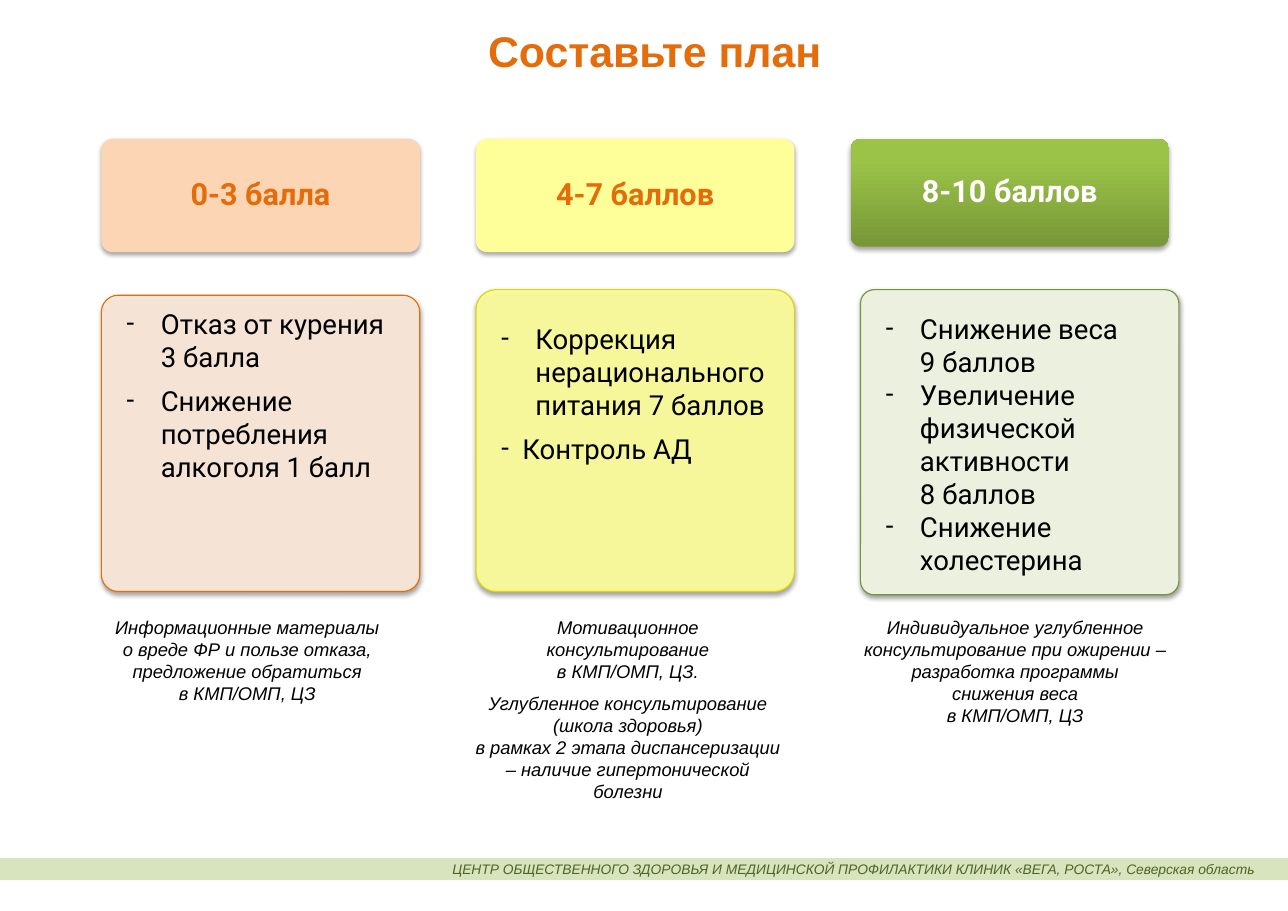
from copy import deepcopy
from lxml.etree import SubElement as Sub
from pptx import Presentation
from pptx.dml.color import RGBColor as Rgb
from pptx.enum.shapes import MSO_SHAPE as Kind
from pptx.enum.text import MSO_ANCHOR as Anchor, MSO_AUTO_SIZE as Fit, PP_ALIGN as Align
from pptx.oxml.ns import qn
from pptx.util import Inches, Pt

# Content: one dict per column; list items are (text, indent)
TITLE = "Составьте план"
FOOTER = ("ЦЕНТР ОБЩЕСТВЕННОГО ЗДОРОВЬЯ И МЕДИЦИНСКОЙ ПРОФИЛАКТИКИ "
          "КЛИНИК «ВЕГА, РОСТА», Северская область")
COLUMNS = [
    {"head": "0-3 балла", "key": "peach", "ink": "orange", "tall": 1.03,
     "card": (0.92, 2.68, 2.69, 0.057), "alpha": 91,
     "list": (2.76, 1.65), "gap": 7,
     "items": [("Отказ от курения\v3 балла", 0.31),
               ("Снижение потребления алкоголя 1 балл", 0.31)],
     "note": (0.83, 2.83, 0.91),
     "notes": ["Информационные материалы\vо вреде ФР и пользе отказа, "
               "предложение обратиться\vв КМП/ОМП, ЦЗ"]},
    {"head": "4-7 баллов", "key": "lemon", "ink": "orange", "tall": 1.03,
     "card": (4.32, 2.63, 2.74, 0.066), "alpha": 91,
     "list": (2.6, 1.94), "gap": 7,
     "items": [("Коррекция нерационального питания 7 баллов", 0.31),
               ("Контроль АД", 0.19)],
     "note": (4.2, 3, 1.81),
     "notes": ["Мотивационное консультирование\vв КМП/ОМП, ЦЗ.",
               "Углубленное консультирование (школа здоровья)\vв рамках 2 этапа "
               "диспансеризации – наличие гипертонической болезни"]},
    {"head": "8-10 баллов", "key": "green", "ink": "white", "tall": 0.98,
     "card": (7.81, 2.63, 2.77, 0.045), "alpha": 100,
     "list": (2.81, 2.44), "gap": 0,
     "items": [("Снижение веса\v9 баллов", 0.31),
               ("Увеличение физической активности\v8 баллов", 0.31),
               ("Снижение холестерина", 0.31)],
     "note": (7.56, 3.31, 1.11),
     "notes": ["Индивидуальное углубленное консультирование при ожирении –\v"
               "разработка программы\vснижения веса\vв КМП/ОМП, ЦЗ"]},
]

# Look
HEX = {"orange": "E46C0A", "white": "FFFFFF", "black": "000000", "moss": "4F6228",
       "band": "D7E4BD", "dark": "779737", "light": "9BC348",
       "peach": "FCD5B5", "lemon": "FFFF99",
       "peach card": "FDEADA", "lemon card": "FFFF99", "green card": "EBF1DE",
       "peach edge": "E46C0A", "lemon edge": "D8D806", "green edge": "77933C"}
FONTS = {
    "title": {"name": "Arial", "size": Pt(28), "bold": True, "italic": False},
    "head": {"name": "Roboto", "size": Pt(20), "bold": True, "italic": False},
    "list": {"name": "Roboto", "size": Pt(18), "bold": False, "italic": False},
    "note": {"name": "Arial", "size": Pt(12), "bold": False, "italic": True},
    "foot": {"name": "Arial", "size": Pt(9), "bold": False, "italic": True},
}
LEFT, PITCH, WIDE, TOP = 0.92, 3.4, 2.89, 1.26


def color(key):
    return Rgb.from_string(HEX[key])


def place(shape, *box):
    for side, size in zip(("left", "top", "width", "height"), box):
        setattr(shape, side, Inches(size))


def write(shape, lines, look, ink="black", align=Align.LEFT, anchor=Anchor.TOP,
          pads=(0.1, 0.05, 0.1, 0.05), gap=0, lead=1.0):
    """Fill the text frame and format each paragraph and run."""
    frame = shape.text_frame
    frame.text = "\n".join(lines)
    frame.word_wrap, frame.auto_size = True, Fit.NONE
    frame.vertical_anchor = anchor
    for side, pad in zip(("left", "top", "right", "bottom"), pads):
        setattr(frame, "margin_" + side, Inches(pad))
    for i, para in enumerate(frame.paragraphs):
        form = {"alignment": align, "line_spacing": lead, "space_after": Pt(0),
                "space_before": Pt(gap if i or look == "list" else 0)}
        for name, value in form.items():
            setattr(para, name, value)
        for run in para.runs:
            for name, value in FONTS[look].items():
                setattr(run.font, name, value)
            run.font.color.rgb = color(ink)
        # Line breaks keep the size of the text around them
        for br in para._p.findall(qn("a:br")):
            br.append(deepcopy(para.runs[0]._r.rPr))


def panel(box, fill, kind=Kind.ROUNDED_RECTANGLE, curve=None, edge=None):
    shape = slide.shapes.add_shape(kind, *map(Inches, box))
    shape.shadow.inherit = False
    if curve:
        shape.adjustments[0] = curve
    if fill == "green":
        shape.fill.gradient()
        shape.fill.gradient_angle = 90
        for stop, (spot, key) in zip(shape.fill.gradient_stops,
                                     ((0, "dark"), (0.8, "light"))):
            stop.position, stop.color.rgb = spot, color(key)
    else:
        shape.fill.solid()
        shape.fill.fore_color.rgb = color(fill)
    if edge:
        shape.line.color.rgb, shape.line.width = color(edge), Pt(0.75)
    else:
        shape.line.fill.background()
    return shape


def fade(parent, percent):
    Sub(parent, qn("a:alpha"), val=str(percent * 1000))


def shade(shape, percent, dist):
    effects = shape._element.spPr.find(qn("a:effectLst"))
    cast = Sub(effects, qn("a:outerShdw"), blurRad=str(Pt(3.1)), dist=str(Pt(dist)),
               dir="5400000", rotWithShape="0")
    fade(Sub(cast, qn("a:srgbClr"), val=HEX["black"]), percent)


def dash(para, indent):
    props = para._p.get_or_add_pPr()
    props.set("marL", str(Inches(indent)))
    props.set("indent", str(-Inches(indent)))
    Sub(props, qn("a:buFont"), typeface=FONTS["list"]["name"])
    Sub(props, qn("a:buChar"), char="-")


deck = Presentation()
deck.slide_width, deck.slide_height = Inches(11.69), Inches(8.27)
slide = deck.slides.add_slide(deck.slide_layouts[4])
title, *bodies = [s for s in slide.placeholders
                  if s.placeholder_format.idx < 10]
spare = bodies.pop()
spare._element.getparent().remove(spare._element)

# Footer band and title
band = panel((0, 7.79, 11.69, 0.2), "band", Kind.RECTANGLE)
write(band, [FOOTER], "foot", "moss", Align.RIGHT, Anchor.MIDDLE, (0.1, 0.05, 0.31, 0.05))
place(title, 4.33, 0.25, 3.65, 0.51)
write(title, [TITLE], "title", "orange", lead=Pt(28))

# Columns: score, actions, note
for i, (col, body) in enumerate(zip(COLUMNS, bodies)):
    key = col["key"]
    head = panel((LEFT + i * PITCH, TOP, WIDE, col["tall"]), key, curve=0.1)
    shade(head, 35, 1.8)
    write(head, [col["head"]], "head", col["ink"], Align.CENTER, Anchor.MIDDLE,
          (0.11,) * 4, lead=0.9)

    x, y, tall, curve = col["card"]
    card = panel((x, y, WIDE, tall), key + " card", curve=curve, edge=key + " edge")
    shade(card, 38, 1.6)
    if col["alpha"] < 100:
        fade(card._element.spPr.find(qn("a:solidFill"))[0], col["alpha"])

    y, tall = col["list"]
    place(body, x + 0.08, y, 2.72, tall)
    slide.shapes._spTree.append(body._element)
    write(body, [text for text, _ in col["items"]], "list", anchor=Anchor.MIDDLE,
          pads=(0.15,) * 4, gap=col["gap"])
    for para, (_, indent) in zip(body.text_frame.paragraphs, col["items"]):
        dash(para, indent)

    x, wide, tall = col["note"]
    note = slide.shapes.add_textbox(*map(Inches, (x, 5.54, wide, tall)))
    write(note, col["notes"], "note", align=Align.CENTER, gap=7)

deck.save("out.pptx")
